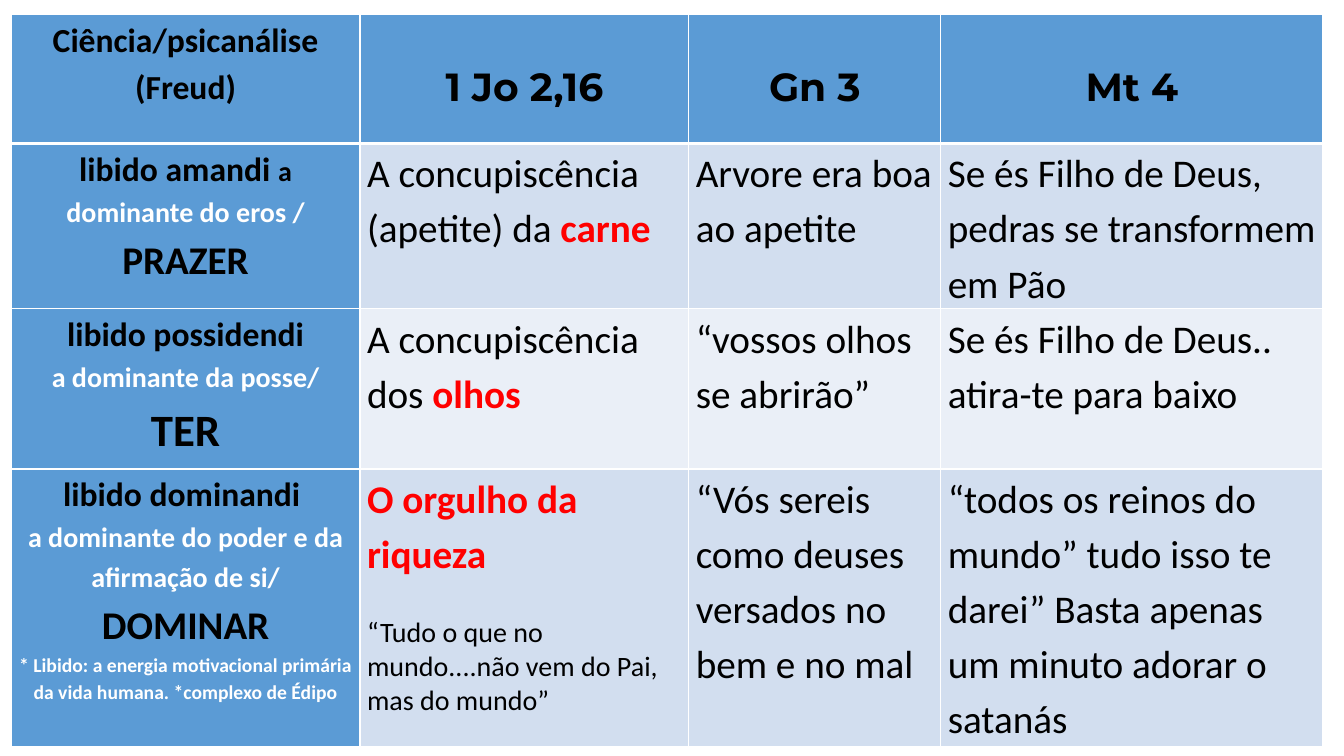
from lxml.etree import SubElement
from pptx import Presentation
from pptx.dml.color import RGBColor
from pptx.enum.text import MSO_ANCHOR, PP_ALIGN
from pptx.oxml.ns import qn
from pptx.util import Inches, Pt

BLACK = RGBColor(0x00, 0x00, 0x00)
WHITE = RGBColor(0xFF, 0xFF, 0xFF)
RED = RGBColor(0xFF, 0x00, 0x00)
BLUE = RGBColor(0x5B, 0x9B, 0xD5)
BAND_DARK = RGBColor(0xD2, 0xDE, 0xEF)
BAND_LIGHT = RGBColor(0xEA, 0xEF, 0xF7)


class Run:
    """A piece of text with its own look."""

    def __init__(self, text, size=28, color=BLACK, bold=True, font="Calibri"):
        self.text, self.size, self.color = text, size, color
        self.bold, self.font = bold, font


class SlideBuilder:
    """Holds the deck style and the current slide."""

    line_spacing = 1.15
    side_margin = Inches(0.07)

    def __init__(self, deck):
        self.width, self.height = deck.slide_width, deck.slide_height
        self.slide = deck.slides.add_slide(deck.slide_layouts[6])

    def across(self, percent):
        return round(self.width * percent / 100)

    def down(self, percent):
        return round(self.height * percent / 100)

    def table(self, left, top, columns, rows):
        frame = self.slide.shapes.add_table(
            len(rows), len(columns), self.across(left), self.down(top),
            self.across(sum(columns)), self.down(sum(rows)))
        grid = frame.table
        grid.horz_banding = False
        grid.first_row = False
        for column, share in zip(grid.columns, columns):
            column.width = self.across(share)
        for row, share in zip(grid.rows, rows):
            row.height = self.down(share)
        return grid

    def borders(self, cell, bottom):
        properties = cell._tc.get_or_add_tcPr()
        for side, points in (("L", 1), ("R", 1), ("T", 1), ("B", bottom)):
            line = SubElement(properties, qn(f"a:ln{side}"), w=str(Pt(points)))
            fill = SubElement(line, qn("a:solidFill"))
            SubElement(fill, qn("a:srgbClr"), val=str(WHITE))

    def cell(self, cell, paragraphs, fill, centered=False, top=0, bottom_line=1):
        self.borders(cell, bottom_line)
        cell.fill.solid()
        cell.fill.fore_color.rgb = fill
        cell.margin_left = cell.margin_right = self.side_margin
        cell.margin_top, cell.margin_bottom = Inches(top), 0
        cell.vertical_anchor = MSO_ANCHOR.TOP
        for index, runs in enumerate(paragraphs):
            frame = cell.text_frame
            paragraph = frame.add_paragraph() if index else frame.paragraphs[0]
            paragraph.alignment = PP_ALIGN.CENTER if centered else PP_ALIGN.LEFT
            paragraph.line_spacing = self.line_spacing
            for part in runs:
                self.run(paragraph, part)

    def run(self, paragraph, part):
        run = paragraph.add_run()
        run.text = part.text
        run.font.name, run.font.size = part.font, Pt(part.size)
        run.font.bold, run.font.color.rgb = part.bold, part.color


def plain(text):
    return Run(text, bold=False)


def gloss(text, size=20):
    return Run(text, size, WHITE)


# Headings
FREUD = "Ciência/psicanálise (Freud)"
BIBLE_PASSAGES = ["1 Jo 2,16", "Gn 3", "Mt 4"]

# Each row: the libido, then its three passages
LIBIDOS = [
    [
        [[Run("libido amandi ", 24), Run("a ", 20),
          gloss("dominante do eros / "), Run("PRAZER")]],
        [[plain("A concupiscência (apetite) da "), Run("carne", color=RED)]],
        [[plain("Arvore era boa ao apetite")]],
        [[plain("Se és Filho de Deus, pedras se transformem em Pão")]],
    ],
    [
        [[Run("libido possidendi", 24)],
         [gloss("a dominante da posse/ "), Run("TER", 32)]],
        [[plain("A concupiscência dos "), Run("olhos", color=RED)]],
        [[plain("“vossos olhos se abrirão”")]],
        [[plain("Se és Filho de Deus.. atira-te para baixo")]],
    ],
    [
        [[Run("libido dominandi ", 24)],
         [gloss("a dominante do poder e da afirmação de si/")],
         [Run("DOMINAR")],
         [gloss("* Libido: a energia motivacional primária da vida humana. "
                "*complexo de Édipo", 14)]],
        [[Run("O orgulho da riqueza", color=RED)],
         [Run("“Tudo o que no mundo....não vem do Pai, mas do mundo”",
              20, bold=False)]],
        [[plain("“Vós sereis como deuses versados no bem e no mal")]],
        [[plain("“todos os reinos do mundo” tudo isso te darei” "
                "Basta apenas um minuto adorar o satanás")]],
    ],
]


def main():
    deck = Presentation()
    deck.slide_width, deck.slide_height = Inches(13.33), Inches(7.5)
    builder = SlideBuilder(deck)
    comparison = builder.table(0.83, 1.87, columns=[25.96, 24.46, 18.75, 28.43],
                               rows=[17.1, 21.85, 21.2, 36.7])

    # Heading row
    builder.cell(comparison.cell(0, 0), [[Run(FREUD, 24)]], BLUE,
                 centered=True, bottom_line=3)
    for column, passage in enumerate(BIBLE_PASSAGES, start=1):
        builder.cell(comparison.cell(0, column),
                     [[Run(passage, font="Montserrat")]], BLUE,
                     centered=True, top=0.42, bottom_line=3)

    # Libido rows, banded beside a blue first column
    for row, libido in enumerate(LIBIDOS, start=1):
        band = BAND_DARK if row % 2 else BAND_LIGHT
        for column, paragraphs in enumerate(libido):
            builder.cell(comparison.cell(row, column), paragraphs,
                         band if column else BLUE, centered=column == 0)

    # Quotation set apart below the pride of riches
    quotation = comparison.cell(3, 1).text_frame.paragraphs[1]
    quotation.line_spacing = 1.0
    quotation.space_before = Pt(26)

    deck.save("out.pptx")


if __name__ == "__main__":
    main()
